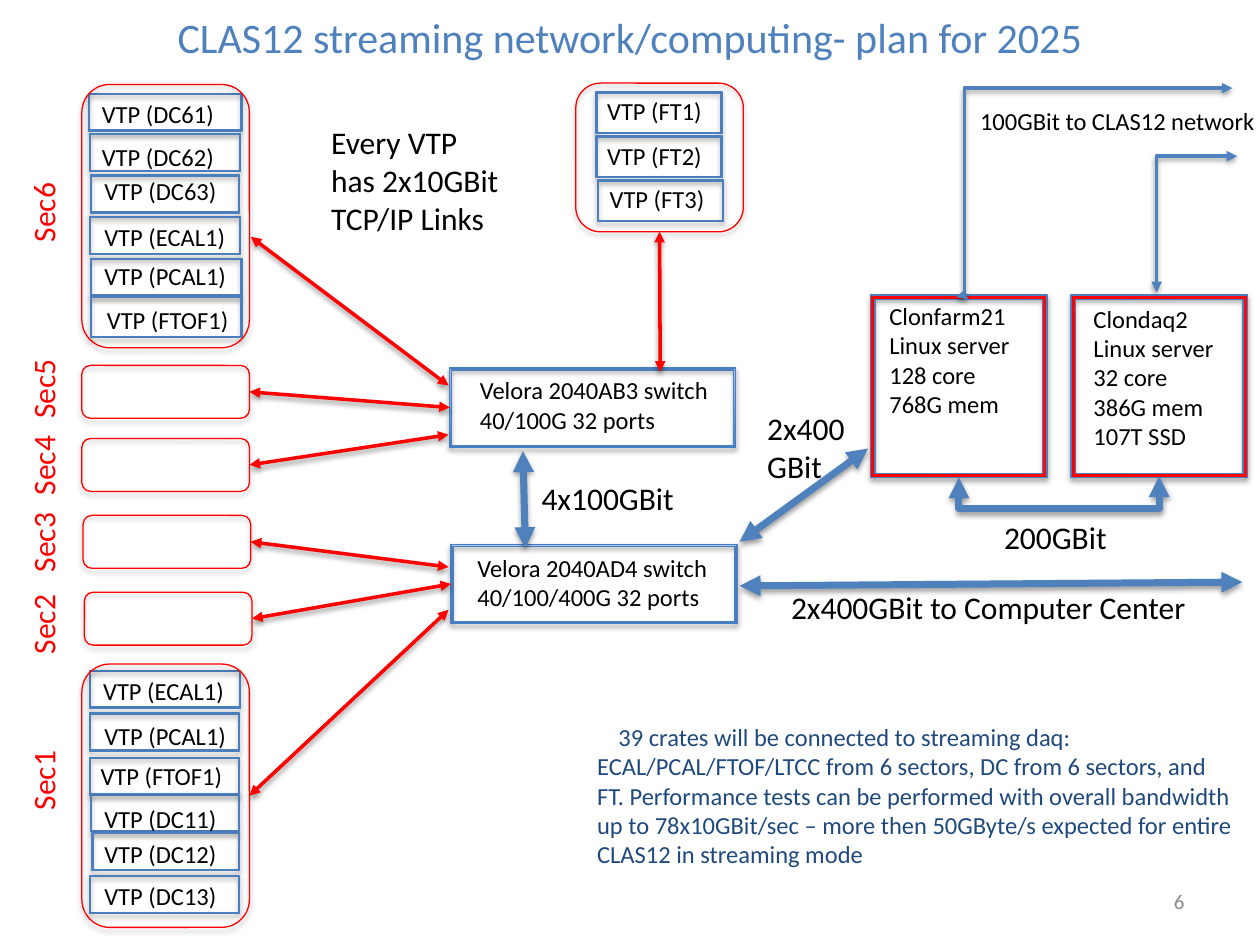
"""Build the streaming network and computing plan slide on a 100 by 75 grid."""
from typing import NamedTuple, Optional

from pptx import Presentation
from pptx import util as u
from pptx.dml.color import RGBColor
from pptx.enum import shapes, text
from pptx.oxml import parse_xml
from pptx.oxml.ns import nsdecls, qn

COLS, ROWS = 100, 75
BLUE, EDGE, RED, BLACK, NAVY, GREY = "4F81BD", "4B7EBC", "FF0000", "000000", "1F497D", "8C8C8C"
BLUES, REDS = ("3F80CE", "A4C4FF"), ("FF0000", "FA0A0D")
KIND, ALIGN = shapes.MSO_SHAPE, text.PP_ALIGN

prs = Presentation()
prs.slide_width, prs.slide_height = u.Inches(10), u.Inches(7.5)
s = prs.slides.add_slide(prs.slide_layouts[6])


class Box(NamedTuple):
    """Place of an object, in grid columns and rows."""
    x: float
    y: float
    w: float
    h: float


class Label(NamedTuple):
    """Text with its place and look."""
    lines: tuple
    box: Box
    size: int = 14
    color: str = BLACK
    wrap: bool = True
    turn: int = 0
    align: ALIGN = ALIGN.LEFT
    middle: bool = False
    indent: float = 0


class Crate(NamedTuple):
    """A crate name with the places of its frame and its text."""
    name: str
    frame: Box
    x: float
    y: float


class Sector(NamedTuple):
    """A rounded sector outline and its sideways label."""
    name: str
    box: Box
    label_y: float


class Arrow(NamedTuple):
    """A double arrow; joins hold a shape name and side."""
    start: tuple
    end: tuple
    color: str = RED
    width: float = 2
    start_join: Optional[tuple] = None
    end_join: Optional[tuple] = None


class Elbow(NamedTuple):
    """A double elbow arrow with its turn, flips and bend share."""
    box: Box
    turn: int
    flips: str
    bend: float
    width: float


def rgb(value: str) -> RGBColor:
    """Return the colour of a hex string."""
    return RGBColor.from_string(value)


def cols(n: float) -> int:
    """Return the length of n grid columns."""
    return round(prs.slide_width * n / COLS)


def rows(n: float) -> int:
    """Return the length of n grid rows."""
    return round(prs.slide_height * n / ROWS)


def place(b: Box) -> tuple:
    """Return left, top, width and height."""
    return cols(b.x), rows(b.y), cols(b.w), rows(b.h)


def shade(sp, opacity: int) -> None:
    """Give an object a soft shadow below it."""
    sp._element.spPr.append(parse_xml(
        f'<a:effectLst {nsdecls("a")}><a:outerShdw blurRad="{u.Pt(3.1)}" dist="{u.Pt(1.8)}" '
        f'dir="5400000" rotWithShape="0"><a:srgbClr val="{BLACK}">'
        f'<a:alpha val="{opacity}000"/></a:srgbClr></a:outerShdw></a:effectLst>'))


def draw_label(label: Label) -> None:
    """Draw a text box, one paragraph per line."""
    sp = s.shapes.add_textbox(*place(label.box))
    sp.rotation = label.turn
    tf = sp.text_frame
    tf.word_wrap = label.wrap
    tf.auto_size = text.MSO_AUTO_SIZE.NONE if label.middle else text.MSO_AUTO_SIZE.SHAPE_TO_FIT_TEXT
    tf.vertical_anchor = text.MSO_ANCHOR.MIDDLE if label.middle else text.MSO_ANCHOR.TOP
    for i, line in enumerate(label.lines):
        p = tf.add_paragraph() if i else tf.paragraphs[0]
        p.alignment = label.align
        if label.indent:
            p._p.get_or_add_pPr().set("indent", str(cols(label.indent)))
        r = p.add_run()
        r.text = line
        r.font.name, r.font.size = "Calibri", u.Pt(label.size)
        r.font.color.rgb = rgb(label.color)


def draw_frame(box: Box, tones: tuple = BLUES, angle: int = 90):
    """Draw a thin frame filled with a gradient."""
    sp = s.shapes.add_shape(KIND.FRAME, *place(box))
    sp.adjustments[0] = 0.025
    sp.fill.gradient()
    sp.fill.gradient_angle = angle
    for stop, tone in zip(sp.fill.gradient_stops, tones):
        stop.color.rgb = rgb(tone)
    sp.line.color.rgb, sp.line.width = rgb(EDGE), u.Pt(0.75)
    shade(sp, 35)
    return sp


def draw_group(box: Box):
    """Draw a hollow rounded outline."""
    sp = s.shapes.add_shape(KIND.ROUNDED_RECTANGLE, *place(box))
    sp.fill.background()
    sp.line.color.rgb, sp.line.width = rgb(RED), u.Pt(0.75)
    shade(sp, 35)
    return sp


def style_arrow(sp, color: str, width: float) -> None:
    """Set line, both arrowheads and shadow."""
    sp.line.color.rgb, sp.line.width = rgb(color), u.Pt(width)
    ln = sp._element.spPr.find(qn("a:ln"))
    for end in ("headEnd", "tailEnd"):
        ln.append(parse_xml(f'<a:{end} {nsdecls("a")} type="triangle"/>'))
    shade(sp, 38)


def draw_arrow(a: Arrow, joints: dict) -> None:
    """Draw a straight double arrow and join its ends."""
    sp = s.shapes.add_connector(shapes.MSO_CONNECTOR.STRAIGHT, cols(a.start[0]), rows(a.start[1]),
                                cols(a.end[0]), rows(a.end[1]))
    for join, connect in ((a.start_join, sp.begin_connect), (a.end_join, sp.end_connect)):
        if join:
            connect(joints[join[0]], join[1])
    style_arrow(sp, a.color, a.width)


def draw_elbow(e: Elbow) -> None:
    """Draw an elbow double arrow."""
    x, y, w, h = place(e.box)
    sp = s.shapes.add_connector(shapes.MSO_CONNECTOR.ELBOW, x, y, x + w, y + h)
    xfrm = sp._element.spPr.find(qn("a:xfrm"))
    xfrm.set("rot", str(e.turn * 60000))
    for flip in e.flips:
        xfrm.set("flip" + flip, "1")
    geom = sp._element.spPr.find(qn("a:prstGeom"))
    geom.find(qn("a:avLst")).append(parse_xml(
        f'<a:gd {nsdecls("a")} name="adj1" fmla="val {round(e.bend * 100000)}"/>'))
    style_arrow(sp, BLUE, e.width)


CRATES = [Crate(f"VTP ({n})", Box(*b), x, y) for n, b, x, y in (
    ("DC61", (7, 7.4, 12.2, 3), 7.1, 7.4), ("DC62", (7.1, 10.6, 12, 3), 7.1, 10.8),
    ("DC63", (7.2, 13.9, 11.8, 3), 7.3, 13.5), ("ECAL1", (7.1, 17.2, 12, 3), 7.3, 17.1),
    ("PCAL1", (7.2, 20.5, 12, 3), 7.3, 20.2), ("FTOF1", (7.2, 23.5, 12, 3.3), 7.5, 23.7),
    ("ECAL1", (7.1, 53.2, 12, 3), 7.2, 53.2), ("PCAL1", (7.1, 56.6, 11.9, 3), 7.3, 56.7),
    ("FTOF1", (7.1, 60.1, 11.9, 3), 7, 59.9), ("DC11", (7.2, 63, 11.8, 3), 7.3, 63.3),
    ("DC12", (7.3, 66.1, 11.7, 3), 7.3, 66.1), ("DC13", (7.1, 69.5, 11.9, 3), 7.3, 69.4),
    ("FT1", (47.3, 7.3, 10, 3.3), 47.2, 7.1), ("FT2", (47.3, 10.8, 10, 3.3), 47.2, 10.7),
    ("FT3", (47.4, 14.3, 10, 3.3), 47.4, 14.1))]

SECTORS = [Sector(f"Sec{n}", Box(x, y, 13.3, h), label_y) for n, x, y, h, label_y in (
    (6, 6.5, 6.7, 20.9, 14.8), (5, 6.5, 29, 4.2, 28.8), (4, 6.5, 34.8, 4.2, 34.9),
    (3, 6.6, 40.9, 4.2, 41), (2, 6.7, 47, 4.2, 47.5), (1, 6.5, 52.7, 20.9, 59.9))]

LABELS = (
    Label(("CLAS12 streaming network/computing- plan for 2025",), Box(5, -0.3, 90, 6.4), 24, BLUE,
          align=ALIGN.CENTER, middle=True),
    Label(("Every VTP", "has 2x10GBit", "TCP/IP Links"), Box(25.3, 9.3, 19.6, 10.1), 18),
    Label(("Velora 2040AB3 switch", "40/100G 32 ports"), Box(37.1, 29.3, 20.1, 5.7)),
    Label(("Velora 2040AD4 switch", "40/100/400G 32 ports"), Box(36.9, 43.4, 20.9, 5.7), wrap=False),
    Label(("4x100GBit",), Box(42, 37.5, 12.6, 4), 18, wrap=False),
    Label(("2x400GBit",), Box(59.9, 32, 8.5, 7.1), 18),
    Label(("2x400GBit to Computer Center",), Box(61.8, 46.2, 33.7, 4), 18, wrap=False),
    Label(("200GBit",), Box(78.7, 40.6, 14.5, 4), 18),
    Label(("100GBit to CLAS12 network",), Box(76.8, 7.9, 24.8, 3.4)),
    Label(("Clonfarm21", "Linux server", "128 core", "768G mem"), Box(69.6, 23.4, 12.5, 10.4)),
    Label(("Clondaq2", "Linux server", "32 core", "386G mem", "107T SSD"),
          Box(85.8, 23.6, 12.5, 12.8)),
    Label(("39 crates will be connected to streaming daq: ECAL/PCAL/FTOF/LTCC from 6 sectors, "
           "DC from 6 sectors, and FT. Performance tests can be performed with overall bandwidth "
           "up to 78x10GBit/sec – more then 50GByte/s expected for entire CLAS12 in streaming mode",),
          Box(46.4, 56.8, 52.5, 13), color=NAVY, indent=1.7),
    Label(("6",), Box(71.7, 69.5, 23.3, 4), 12, GREY, align=ALIGN.RIGHT, middle=True),
)

ARROWS = (
    Arrow((19.9, 18.8), (35.6, 30.6)),
    Arrow((19.8, 31.1), (35.7, 32.4), start_join=("Sec5", 3), end_join=("upper", 1)),
    Arrow((19.8, 36.9), (35.6, 34.5), start_join=("Sec4", 3)),
    Arrow((19.9, 43), (35.6, 45), start_join=("Sec3", 3)),
    Arrow((20, 49.1), (35.8, 46.4), start_join=("Sec2", 3), end_join=("lower", 1)),
    Arrow((19.8, 63.1), (35.6, 48.4), start_join=("Sec1", 3)),
    Arrow((52.4, 18.3), (52.4, 29.5), start_join=("FT", 2)),
    Arrow((58.7, 46.5), (98.6, 46.2), BLUE, 4),
    Arrow((58.7, 43), (68.9, 35.6), BLUE, 4),
    Arrow((41.7, 43.5), (41.5, 35.8), BLUE, 4),
)

ELBOWS = (
    Elbow(Box(84, 29.9, 0.1, 15.9), 90, "HV", -25, 4),
    Elbow(Box(75.9, 7, 21.9, 16.6), 0, "V", 0.03, 2),
    Elbow(Box(89.6, 14.6, 10.8, 6.4), 90, "HV", 1, 2),
)


def main() -> None:
    """Draw the slide and save it."""
    joints = {"upper": draw_frame(Box(35.7, 29.2, 22.7, 6.3)),
              "lower": draw_frame(Box(35.8, 43.2, 22.7, 6.3)),
              "FT": draw_group(Box(45.7, 6.6, 13.3, 11.8))}
    for x in (69.1, 85):
        draw_frame(Box(x, 23.4, 14, 14.5), REDS, 0)
    for c in CRATES:
        draw_frame(c.frame)
        draw_label(Label((c.name,), Box(c.x, c.y, 13, 3.4)))
    for sec in SECTORS:
        joints[sec.name] = draw_group(sec.box)
        draw_label(Label((sec.name,), Box(0, sec.label_y, 6.8, 4), 18, RED, wrap=False, turn=270))
    for a in ARROWS:
        draw_arrow(a, joints)
    for e in ELBOWS:
        draw_elbow(e)
    for label in LABELS:
        draw_label(label)
    prs.save("out.pptx")


if __name__ == "__main__":
    main()
